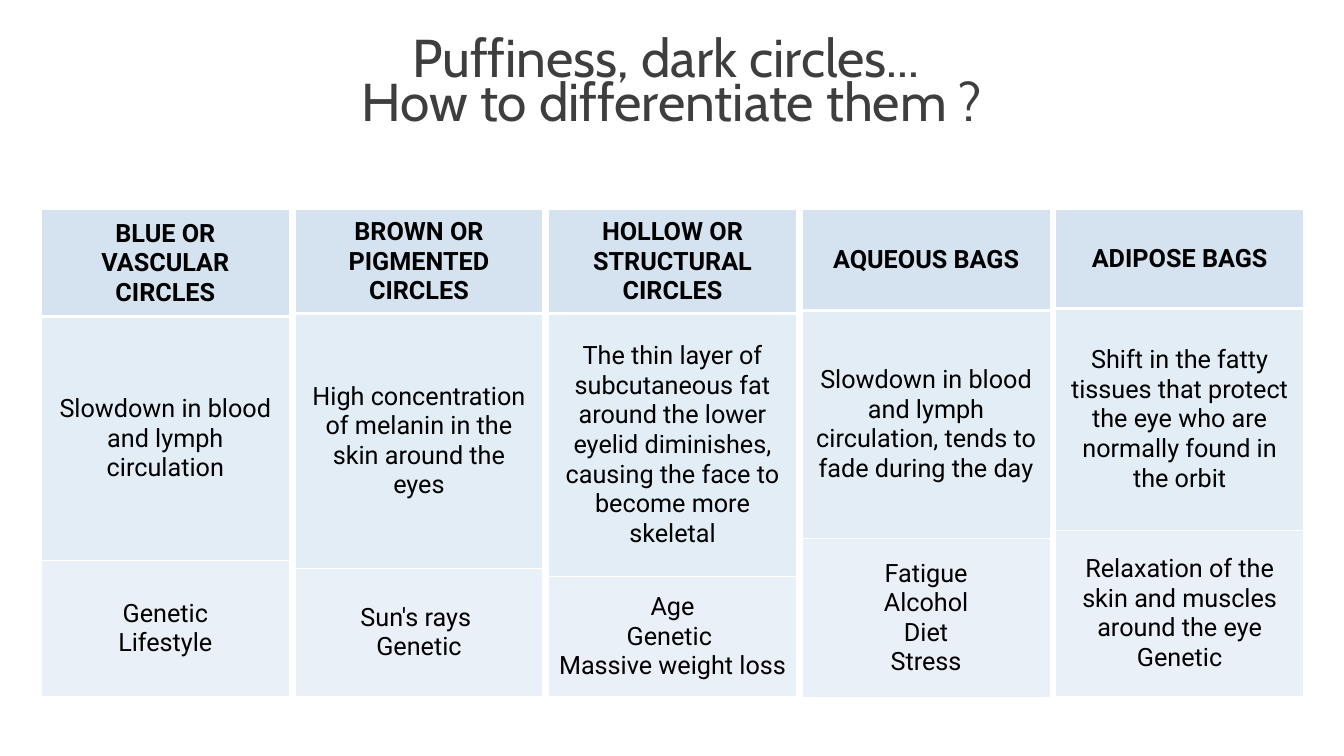
"""Build the slide comparing five kinds of dark circles and eye bags."""
from dataclasses import dataclass

from lxml.etree import SubElement
from pptx import Presentation
from pptx.dml.color import RGBColor
from pptx.enum.text import MSO_ANCHOR, PP_ALIGN
from pptx.oxml.ns import qn
from pptx.util import Inches, Pt

TITLE = ["Puffiness, dark circles... ", "How to differentiate them ?"]

TYPES = [
    ("BLUE OR VASCULAR CIRCLES",
     "Slowdown in blood and lymph circulation",
     "Genetic\nLifestyle"),
    ("BROWN OR PIGMENTED CIRCLES",
     "High concentration of melanin in the skin around the eyes",
     "Sun's rays \nGenetic"),
    ("HOLLOW OR STRUCTURAL CIRCLES",
     "The thin layer of subcutaneous fat around the lower eyelid diminishes, "
     "causing the face to become more skeletal",
     "Age\nGenetic \nMassive weight loss"),
    ("AQUEOUS BAGS",
     "Slowdown in blood and lymph circulation, tends to fade during the day",
     "Fatigue\nAlcohol\nDiet\nStress"),
    ("ADIPOSE BAGS",
     "Shift in the fatty tissues that protect the eye who are normally found in the orbit",
     "Relaxation of the skin and muscles around the eye Genetic"),
]
ROW_HEIGHTS = [(1.06, 2.42, 1.35), (1.03, 2.53, 1.27), (1.03, 2.61, 1.19),
               (1.0, 2.26, 1.58), (0.98, 2.2, 1.65)]

SLIDE_W, SLIDE_H = 13.33, 7.5
FIRST_LEFT, LAST_LEFT, TOP, COL_W = 0.41, 10.47, 2.08, 2.46
PITCH = (LAST_LEFT - FIRST_LEFT) / (len(TYPES) - 1)


@dataclass(frozen=True)
class Theme:
    """Colours, fonts and sizes of the slide."""
    title_font: str = "Cabin"
    body_font: str = "Roboto"
    title_size: int = 38
    title_leading: int = 32
    body_size: int = 18
    title_color: str = "3E3E3E"
    body_color: str = "000000"
    border: str = "FFFFFF"
    fills: tuple = ("D5E3F0", "E3EDF5", "E9F0F7")
    thin: int = 1
    thick: int = 3


THEME = Theme()


def style(p, font, size, color, bold=False):
    """Centre a paragraph and set its font."""
    p.alignment = PP_ALIGN.CENTER
    p.font.name, p.font.size, p.font.bold = font, Pt(size), bold
    p.font.color.rgb = RGBColor.from_string(color)


def add_borders(cell, bottom):
    """Draw the four borders of a cell, with its own width at the bottom."""
    tcPr = cell._tc.get_or_add_tcPr()
    widths = {"a:lnL": THEME.thin, "a:lnR": THEME.thin, "a:lnT": THEME.thin, "a:lnB": bottom}
    for i, (tag, width) in enumerate(widths.items()):
        ln = SubElement(tcPr, qn(tag), w=str(Pt(width)))
        SubElement(SubElement(ln, qn("a:solidFill")), qn("a:srgbClr"), val=THEME.border)
        tcPr.insert(i, ln)


def add_title(s):
    """Add the two-line title across the slide."""
    tf = s.shapes.add_textbox(0, Inches(0.37), Inches(SLIDE_W), Inches(1)).text_frame
    tf.word_wrap = True
    tf.vertical_anchor = MSO_ANCHOR.MIDDLE
    tf.text = "\n".join(TITLE)
    for p in tf.paragraphs:
        style(p, THEME.title_font, THEME.title_size, THEME.title_color)
        p.line_spacing = Pt(THEME.title_leading)


def add_type(s, left, texts, heights):
    """Add one column: name, explanation and causes."""
    table = s.shapes.add_table(len(texts), 1, Inches(left), Inches(TOP),
                               Inches(COL_W), Inches(sum(heights))).table
    table.horz_banding = False
    for i, (text, height) in enumerate(zip(texts, heights)):
        header = i == 0
        table.rows[i].height = Inches(height)
        cell = table.cell(i, 0)
        cell.text = text
        cell.vertical_anchor = MSO_ANCHOR.MIDDLE
        cell.fill.solid()
        cell.fill.fore_color.rgb = RGBColor.from_string(THEME.fills[i])
        for p in cell.text_frame.paragraphs:
            style(p, THEME.body_font, THEME.body_size, THEME.body_color, header)
        after_header = i == 1
        add_borders(cell, THEME.thick if header else THEME.thin)
        if after_header:
            cell._tc.tcPr.find(qn("a:lnT")).set("w", str(Pt(THEME.thick)))


def main():
    """Build and save the slide."""
    prs = Presentation()
    prs.slide_width, prs.slide_height = Inches(SLIDE_W), Inches(SLIDE_H)
    s = prs.slides.add_slide(prs.slide_layouts[6])
    add_title(s)
    for i, (texts, heights) in enumerate(zip(TYPES, ROW_HEIGHTS)):
        add_type(s, FIRST_LEFT + i * PITCH, texts, heights)
    prs.save("out.pptx")


if __name__ == "__main__":
    main()
